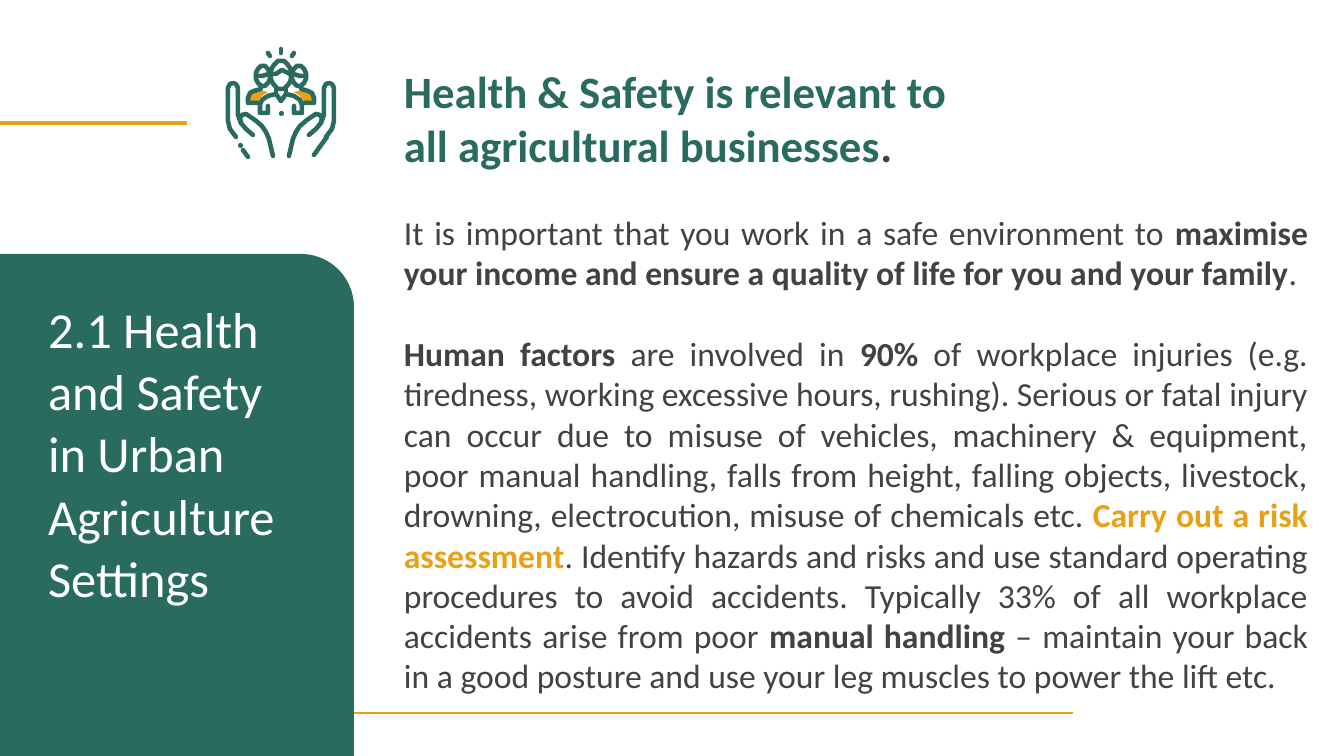
"""Builds the slide on health and safety in urban agriculture."""
import math

from lxml import etree
from pptx import Presentation
from pptx import util as u
from pptx.dml.color import RGBColor
from pptx.enum import shapes, text
from pptx.oxml import ns

SCALE = 12192000 / 1344
AXIS = 281
GREEN = RGBColor(0x29, 0x6B, 0x5F)
GOLD = RGBColor(0xE8, 0xA1, 0x16)
GREY = RGBColor(0x42, 0x42, 0x42)
WHITE = RGBColor(0xFF, 0xFF, 0xFF)

HEADING = [
    [("Health & Safety is relevant to", dict(color=GREEN))],
    [("all agricultural businesses", dict(color=GREEN)), (".", {})],
]
BODY = [
    [
        ("It is important that you work in a safe environment to ", {}),
        ("maximise your income and ensure a quality of life for you and your family", dict(bold=True)),
        (".", {}),
    ],
    [
        ("Human factors ", dict(bold=True)),
        ("are involved in ", {}),
        ("90%", dict(bold=True)),
        (" of workplace injuries (e.g. tiredness, working excessive hours, rushing). "
         "Serious or fatal injury can occur due to misuse of vehicles, machinery & equipment, "
         "poor manual handling, falls from height, falling objects, livestock, drowning, "
         "electrocution, misuse of chemicals etc. ", {}),
        ("Carry out a risk assessment", dict(bold=True, color=GOLD)),
        (". Identify hazards and risks and use standard operating procedures to avoid accidents. "
         "Typically 33% of all workplace accidents arise from poor ", {}),
        ("manual handling ", dict(bold=True)),
        ("– maintain your back in a good posture and use your leg muscles to power the lift etc.", {}),
    ],
]

FINGER = [(236, 137), (230, 129), (228, 121), (228, 88), (230, 84), (233, 83), (236, 84),
          (238, 88), (238, 115), (241, 123), (246, 129), (253, 135)]
PALM = [(241, 123), (240, 118), (242, 115), (246, 114), (255, 120), (262, 126),
        (266, 132), (269, 139), (273, 156)]
SIDE_BODY = [(259, 103), (248, 103), (248, 98), (250, 93), (254, 91), (261, 89), (261, 87)]
SIDE_HAIR = [(256, 76), (262, 76), (269, 74)]
COAT = [(268, 106), (268, 113), (260, 113), (260, 105), (262, 100), (268, 96), (276, 94), (281, 101)]
COLLAR = [(276, 94), (276, 89)]
RAY = [(268, 53), (270, 56)]
SLEEVE = [(249, 101), (250, 95), (254, 92), (261, 90), (268, 92), (262, 96), (258, 101)]
HAIR = [(271, 74), (276, 74), (282, 70), (290, 74)]
TOP_RAY = [(281, 49), (281, 53)]
WRIST_DASH = [(243, 150), (248, 157)]
RIGHT_WRIST = [(327, 137), (314, 155)]


def px(n):
    """Turn pixels into EMU."""
    return u.Emu(round(n * SCALE))


def box(n):
    """Turn a left, top, width, height tuple into EMU."""
    return [px(v) for v in n]


def mirror(points):
    """Reflect points across the icon's axis."""
    return [(2 * AXIS - x, y) for x, y in points]


def ring(x, y, rx, ry, steps=24):
    """Return the points of a closed ellipse."""
    angles = [2 * math.pi * i / steps for i in range(steps + 1)]
    return [(x + rx * math.cos(a), y + ry * math.sin(a)) for a in angles]


def write(p, content, size=24, color=GREY, bold=False):
    """Add a formatted run to a paragraph."""
    r = p.add_run()
    r.text = content
    r.font.name = "Calibri"
    r.font.size = u.Pt(size)
    r.font.bold = bold
    r.font.color.rgb = color


def add_paragraphs(tf, paragraphs, align, before=0, **fmt):
    """Add paragraphs of mixed runs to a text frame."""
    for runs in paragraphs:
        p = tf.paragraphs[0] if not tf.text else tf.add_paragraph()
        p.alignment = align
        p.space_before = u.Pt(before)
        for content, extra in runs:
            write(p, content, **{**fmt, **extra})


def add_rule(s, x, y, width):
    """Draw a horizontal gold rule from the left edge to x."""
    line = s.shapes.add_connector(shapes.MSO_CONNECTOR.STRAIGHT, 0, px(y), px(x), px(y))
    line.line.color.rgb = GOLD
    line.line.width = u.Pt(width)
    etree.SubElement(line.element.spPr, ns.qn("a:effectLst"))


def fill_plain(sp, color):
    """Give a shape a flat fill without outline or shadow."""
    sp.shadow.inherit = False
    sp.fill.solid()
    sp.fill.fore_color.rgb = color
    sp.line.fill.background()


def add_path(icon, *contours, close=False):
    """Add one freeform with the given contours to the icon."""
    builder = icon.shapes.build_freeform(*contours[0][0], scale=SCALE)
    for i, points in enumerate(contours):
        if i:
            builder.move_to(*points[0])
        builder.add_line_segments(points[1:], close=close)
    return builder.convert_to_shape()


def add_strokes(icon, *contours):
    """Add a freeform drawn as green strokes with round ends."""
    sp = add_path(icon, *contours)
    sp.shadow.inherit = False
    sp.fill.background()
    sp.line.color.rgb = GREEN
    sp.line.width = u.Pt(3.25)
    ln = sp.element.spPr.find(ns.qn("a:ln"))
    ln.set("cap", "rnd")
    etree.SubElement(ln, ns.qn("a:round"))


def add_icon(s):
    """Draw two hands holding a group of three people."""
    icon = s.shapes.add_group_shape()
    for flip in (list, mirror):
        fill_plain(add_path(icon, flip(SLEEVE), close=True), GOLD)
        add_strokes(icon, flip(RAY))
    half = [ring(263, 76, 7, 10), SIDE_HAIR, SIDE_BODY, COAT, COLLAR]
    add_strokes(icon, *half, *map(mirror, half), ring(AXIS, 75, 10, 14), HAIR)
    add_strokes(icon, FINGER, PALM)
    add_strokes(icon, mirror(FINGER), mirror(PALM), RIGHT_WRIST)
    add_strokes(icon, TOP_RAY)
    add_strokes(icon, WRIST_DASH)
    for x, y in ((AXIS, 113), (240, 145)):
        dot = icon.shapes.add_shape(shapes.MSO_SHAPE.OVAL, *box((x - 2, y - 2, 5, 5)))
        fill_plain(dot, GREEN)


def add_panel(s):
    """Draw the green panel with its rounded corner."""
    sp = s.shapes.add_shape(shapes.MSO_SHAPE.ROUND_1_RECTANGLE, *box((0, 254, 354, 502)))
    sp.adjustments[0] = 0.15
    fill_plain(sp, GREEN)


def add_title(s):
    """Place the title on top of the panel."""
    sp = s.shapes.title
    sp.left, sp.top, sp.width, sp.height = box((38, 291, 281, 329))
    sp.element.getparent().append(sp.element)
    tf = sp.text_frame
    tf.word_wrap = True
    tf.auto_size = text.MSO_AUTO_SIZE.NONE
    tf.vertical_anchor = text.MSO_ANCHOR.TOP
    p = tf.paragraphs[0]
    p.alignment = text.PP_ALIGN.LEFT
    p.line_spacing = 1.03
    write(p, "2.1 Health and Safety in Urban Agriculture Settings", size=36, color=WHITE)


def add_body(s):
    """Add the heading and the justified text."""
    tf = s.shapes.add_textbox(*box((394, 59, 924, 640))).text_frame
    tf.word_wrap = True
    add_paragraphs(tf, HEADING, text.PP_ALIGN.LEFT, size=32, bold=True)
    add_paragraphs(tf, BODY, text.PP_ALIGN.JUSTIFY, before=28.8)


def main():
    """Build and save the slide."""
    prs = Presentation()
    prs.slide_width, prs.slide_height = px(1344), px(756)
    s = prs.slides.add_slide(prs.slide_layouts[5])
    add_rule(s, 1073, 713, 1.5)
    add_body(s)
    add_panel(s)
    add_title(s)
    add_icon(s)
    add_rule(s, 187, 123, 2.75)
    prs.save("out.pptx")


if __name__ == "__main__":
    main()
